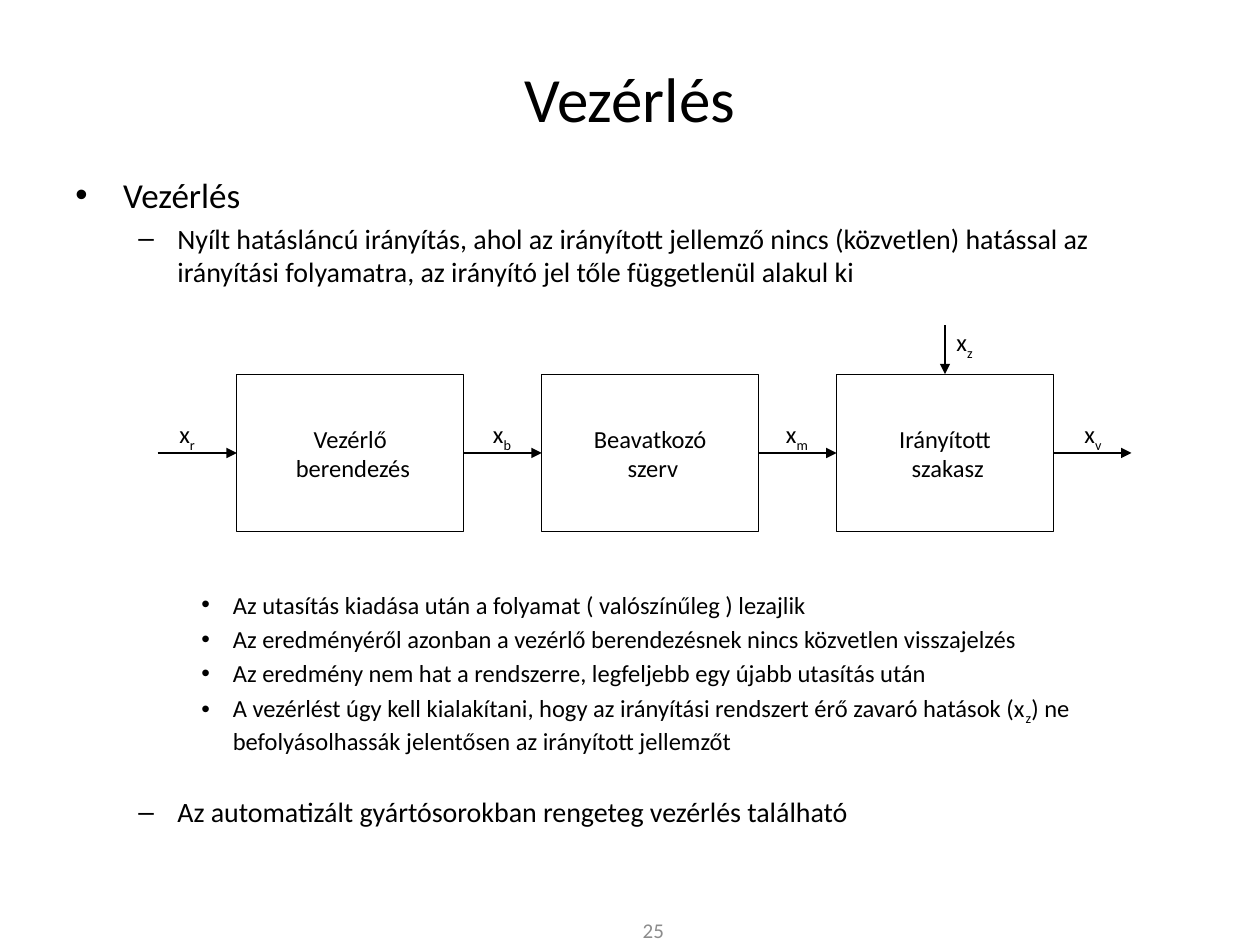
import pptx
import pptx.util
import pptx.dml.color
import pptx.enum.shapes
import pptx.enum.text
import pptx.oxml.ns
import lxml.etree

Inches = pptx.util.Inches
Pt = pptx.util.Pt
CENTER = pptx.enum.text.PP_ALIGN.CENTER
MIDDLE = pptx.enum.text.MSO_ANCHOR.MIDDLE
TOP, LEFT, RIGHT = 0, 1, 3
BLACK = "000000"
OUTLINE = {1: (0.38, -0.38, "•", 20), 2: (0.81, -0.31, "–", 16), 3: (1.25, -0.25, "•", 14)}


def color(hex_value):
    return pptx.dml.color.RGBColor.from_string(hex_value)


def add_xml(parent, tag, **attributes):
    return lxml.etree.SubElement(parent, pptx.oxml.ns.qn(tag), attributes)


def add_run(paragraph, text, size, ink=BLACK, subscript=False):
    run = paragraph.add_run()
    run.text = text
    run.font.name = "Calibri"
    run.font.size = Pt(size)
    run.font.color.rgb = color(ink)
    if subscript:
        run.font._element.set("baseline", "-25000")


def add_text(slide, left, top, width, height, pieces, size, ink=BLACK, anchor=MIDDLE):
    frame = slide.shapes.add_textbox(
        Inches(left), Inches(top), Inches(width), Inches(height)).text_frame
    frame.word_wrap = True
    frame.vertical_anchor = anchor
    paragraph = frame.paragraphs[0]
    paragraph.alignment = CENTER
    for text, subscript in pieces:
        add_run(paragraph, text, size, ink, subscript)


def add_signal(slide, left, top, index):
    add_text(slide, left, top, 0.47, 0.34, [("x", False), (index, True)], 14,
             anchor=pptx.enum.text.MSO_ANCHOR.TOP)


def add_outline(slide, items):
    frame = slide.shapes.add_textbox(
        Inches(0.5), Inches(1.33), Inches(9), Inches(5.7)).text_frame
    frame.word_wrap = True
    for number, (level, space, pieces) in enumerate(items):
        paragraph = frame.add_paragraph() if number else frame.paragraphs[0]
        margin, indent, bullet, size = OUTLINE[level]
        paragraph.level = level - 1
        paragraph.space_before = Pt(space)
        properties = paragraph._p.get_or_add_pPr()
        properties.set("marL", str(Inches(margin)))
        properties.set("indent", str(Inches(indent)))
        add_xml(properties, "a:buFont", typeface="Arial")
        add_xml(properties, "a:buChar", char=bullet)
        for text, subscript in pieces:
            add_run(paragraph, text, size, subscript=subscript)


def add_block(slide, left, width, lines):
    block = slide.shapes.add_shape(
        pptx.enum.shapes.MSO_SHAPE.RECTANGLE,
        Inches(left), Inches(2.97), Inches(width), Inches(1.25))
    block.shadow.inherit = False
    block.fill.solid()
    block.fill.fore_color.rgb = color("FFFFFF")
    block.line.color.rgb = color(BLACK)
    block.line.width = Pt(0.75)
    frame = block.text_frame
    frame.vertical_anchor = MIDDLE
    for number, line in enumerate(lines):
        paragraph = frame.add_paragraph() if number else frame.paragraphs[0]
        paragraph.alignment = CENTER
        add_run(paragraph, line, 14)
    return block


def add_arrow(slide, start, end, source=None, target=None, side=LEFT):
    arrow = slide.shapes.add_connector(
        pptx.enum.shapes.MSO_CONNECTOR.STRAIGHT, *map(Inches, start + end))
    if source:
        arrow.begin_connect(source, RIGHT)
    if target:
        arrow.end_connect(target, side)
    arrow.line.color.rgb = color(BLACK)
    arrow.line.width = Pt(1)
    add_xml(arrow.line._get_or_add_ln(), "a:tailEnd", type="triangle")
    add_xml(arrow._element.spPr, "a:effectLst")


def add_control_chain(slide):
    controller = add_block(slide, 1.88, 1.8, ["Vezérlő", " berendezés"])
    actuator = add_block(slide, 4.3, 1.72, ["Beavatkozó", " szerv"])
    process = add_block(slide, 6.64, 1.72, ["Irányított", " szakasz"])
    signals = [
        (1.25, 1.88, None, controller, 1.25, "r"),
        (3.68, 4.3, controller, actuator, 3.75, "b"),
        (6.02, 6.64, actuator, process, 6.09, "m"),
        (8.36, 8.98, process, None, 8.44, "v"),
    ]
    for start, end, source, target, label_left, index in signals:
        add_arrow(slide, (start, 3.595), (end, 3.595), source, target)
        add_signal(slide, label_left, 3.28, index)
    add_arrow(slide, (7.5, 2.58), (7.5, 2.97), target=process, side=TOP)
    add_signal(slide, 7.42, 2.55, "z")


def main():
    deck = pptx.Presentation()
    deck.slide_width = Inches(10)
    deck.slide_height = Inches(7.5)
    slide = deck.slides.add_slide(deck.slide_layouts[6])
    add_text(slide, 0.5, 0.3, 9, 0.95, [("Vezérlés", False)], 36)
    add_outline(slide, [
        (1, 4, [("Vezérlés", False)]),
        (2, 3.2, [("Nyílt hatásláncú irányítás, ahol az irányított jellemző nincs "
                   "(közvetlen) hatással az irányítási folyamatra, az irányító jel "
                   "tőle függetlenül alakul ki", False)]),
        (3, 172, [("Az utasítás kiadása után a folyamat ( valószínűleg ) lezajlik", False)]),
        (3, 2.8, [("Az eredményéről azonban a vezérlő berendezésnek nincs "
                   "közvetlen visszajelzés", False)]),
        (3, 2.8, [("Az eredmény nem hat a rendszerre, legfeljebb egy újabb "
                   "utasítás után", False)]),
        (3, 2.8, [("A vezérlést úgy kell kialakítani, hogy az irányítási rendszert "
                   "érő zavaró hatások (x", False), ("z", True),
                  (") ne befolyásolhassák jelentősen az irányított jellemzőt", False)]),
        (2, 22.5, [("Az automatizált gyártósorokban rengeteg vezérlés található", False)]),
    ])
    add_control_chain(slide)
    add_text(slide, 4.77, 7.26, 0.83, 0.24, [("25", False)], 12, "8C8C8C")
    deck.save("out.pptx")


if __name__ == "__main__":
    main()
